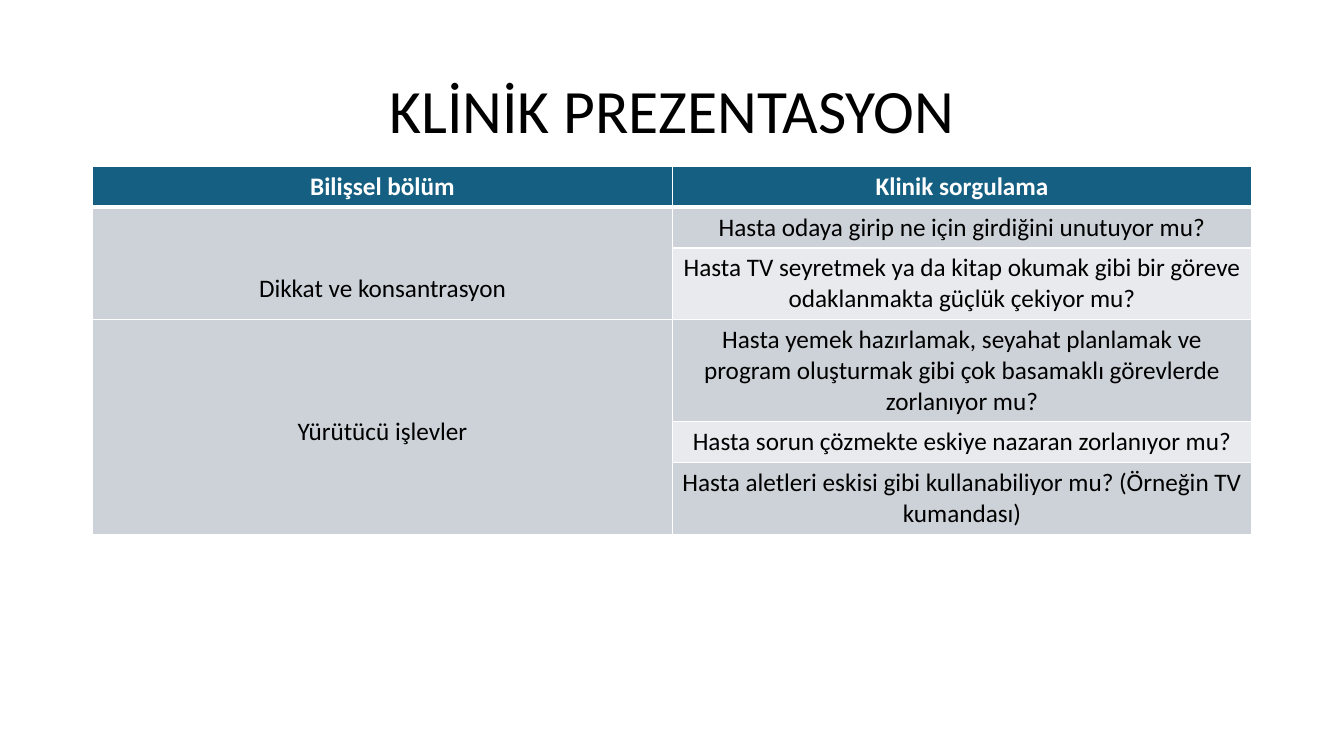
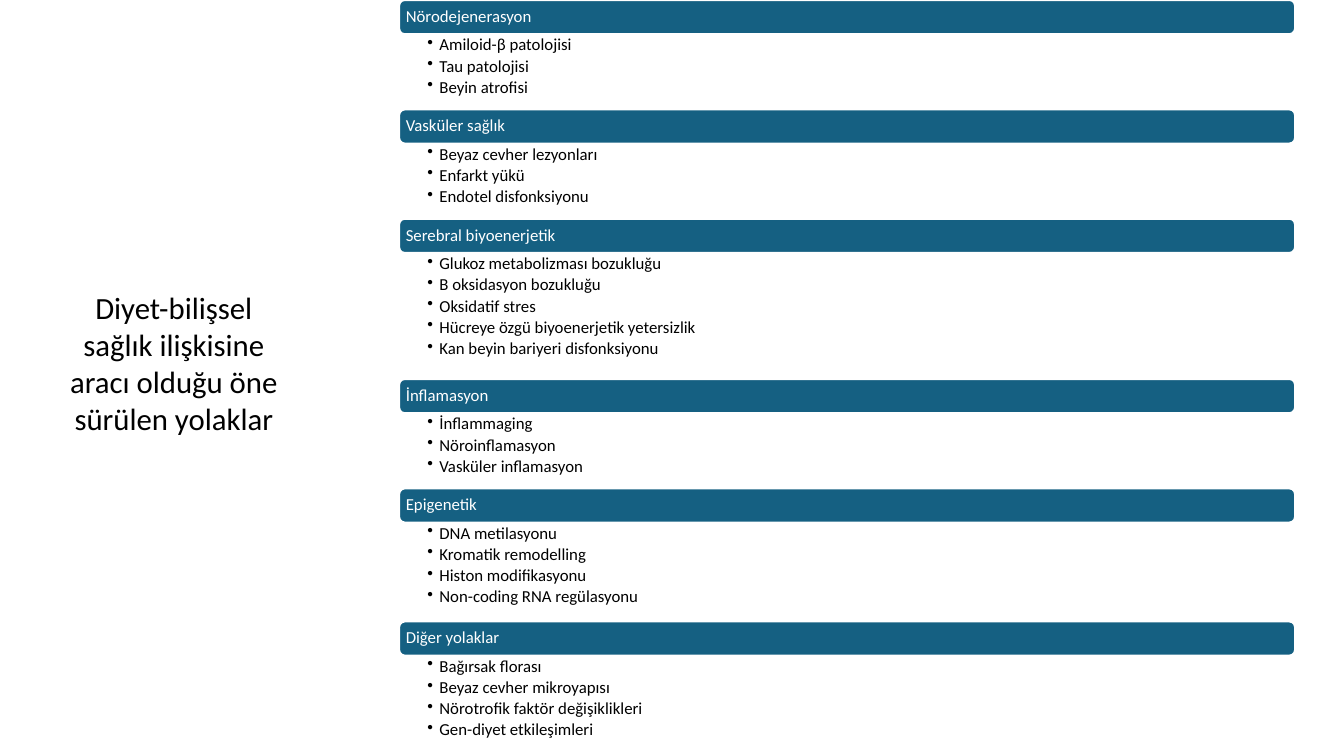
from lxml.etree import SubElement
from pptx import Presentation
from pptx.dml.color import RGBColor
from pptx.enum.shapes import MSO_SHAPE
from pptx.enum.text import MSO_ANCHOR, PP_ALIGN
from pptx.oxml import parse_xml
from pptx.oxml.ns import nsdecls, qn
from pptx.util import Emu, Pt

PX_PER_INCH = 200
FONT = "Calibri"
BLACK, WHITE, TEAL = "000000", "FFFFFF", "156082"
BAND_DARK, BAND_LIGHT = "CCD2D8", "E8EAED"

TABLE_HEADER = ("Bilişsel bölüm", "Klinik sorgulama")
# Cognitive domain, space above its label, questions with their row heights
DOMAINS = [
    ("Dikkat ve konsantrasyon", 132, [
        ("Hasta odaya girip ne için girdiğini unutuyor mu?", 81),
        ("Hasta TV seyretmek ya da kitap okumak gibi bir göreve odaklanmakta güçlük çekiyor mu?", 142),
    ]),
    ("Yürütücü işlevler", 193, [
        ("Hasta yemek hazırlamak, seyahat planlamak ve program oluşturmak gibi çok basamaklı "
         "görevlerde zorlanıyor mu?", 203),
        ("Hasta sorun çözmekte eskiye nazaran zorlanıyor mu?", 81),
        ("Hasta aletleri eskisi gibi kullanabiliyor mu? (Örneğin TV kumandası)", 142),
    ]),
]
HEADER_HEIGHT = 81

PATHWAYS = [
    ("Nörodejenerasyon", ["Amiloid-β patolojisi", "Tau patolojisi", "Beyin atrofisi"]),
    ("Vasküler sağlık", ["Beyaz cevher lezyonları", "Enfarkt yükü", "Endotel disfonksiyonu"]),
    ("Serebral biyoenerjetik", [
        "Glukoz metabolizması bozukluğu", "Β oksidasyon bozukluğu", "Oksidatif stres",
        "Hücreye özgü biyoenerjetik yetersizlik", "Kan beyin bariyeri disfonksiyonu"]),
    ("İnflamasyon", ["İnflammaging", "Nöroinflamasyon", "Vasküler inflamasyon"]),
    ("Epigenetik", ["DNA metilasyonu", "Kromatik remodelling", "Histon modifikasyonu",
                    "Non-coding RNA regülasyonu"]),
    ("Diğer yolaklar", ["Bağırsak florası", "Beyaz cevher mikroyapısı",
                        "Nörotrofik faktör değişiklikleri", "Gen-diyet etkileşimleri"]),
]
PATHWAY_LEFT, PATHWAY_WIDTH, BAR_HEIGHT = 792, 1778, 68
LIST_HEIGHTS = {3: 149, 4: 196, 5: 250}  # by number of items


def px(length):
    return Emu(length * 914400 // PX_PER_INCH)


def color(hex_string):
    return RGBColor.from_string(hex_string)


def fill_solid(target, hex_string):
    target.fill.solid()
    target.fill.fore_color.rgb = color(hex_string)


def style_text(frame, size, hex_string, align=PP_ALIGN.LEFT, bold=False, spacing=1.0):
    for para in frame.paragraphs:
        para.alignment = align
        para.line_spacing = spacing
        for span in para.runs:
            span.font.name = FONT
            span.font.size = Pt(size)
            span.font.bold = bold
            span.font.color.rgb = color(hex_string)


def set_margins(frame, left, top, right, bottom):
    frame.margin_left, frame.margin_top = px(left), px(top)
    frame.margin_right, frame.margin_bottom = px(right), px(bottom)


def add_text(page, text, left, top, width, height):
    """Add a wrapping text box and return its text frame."""
    frame = page.shapes.add_textbox(px(left), px(top), px(width), px(height)).text_frame
    frame.word_wrap = True
    frame.text = text
    return frame


def add_title(page, text, bounds, size, spacing=1.0):
    frame = add_text(page, text, *bounds)
    frame.vertical_anchor = MSO_ANCHOR.MIDDLE
    style_text(frame, size, BLACK, PP_ALIGN.CENTER, spacing=spacing)


def set_borders(cell, top=1, bottom=1):
    """Draw white cell borders; widths are in points."""
    properties = cell._tc.get_or_add_tcPr()
    for index, (side, width) in enumerate((("L", 1), ("R", 1), ("T", top), ("B", bottom))):
        properties.insert(index, parse_xml(
            f'<a:ln{side} {nsdecls("a")} w="{Pt(width)}"><a:solidFill>'
            f'<a:srgbClr val="{WHITE}"/></a:solidFill></a:ln{side}>'))


def fill_cell(cell, text, fill, ink=BLACK, bold=False):
    cell.text = text
    fill_solid(cell, fill)
    style_text(cell.text_frame, 18, ink, PP_ALIGN.CENTER, bold)


def add_domain_table(page, left, top, width):
    questions = [question for domain in DOMAINS for question in domain[2]]
    heights = [HEADER_HEIGHT] + [height for _, height in questions]
    table = page.shapes.add_table(len(heights), 2, px(left), px(top),
                                  px(width), px(sum(heights))).table
    table.horz_banding = False
    for row, height in zip(table.rows, heights):
        row.height = px(height)
    for column, text in enumerate(TABLE_HEADER):
        fill_cell(table.cell(0, column), text, TEAL, WHITE, True)
    for row, (question, _) in enumerate(questions, 1):
        fill_cell(table.cell(row, 0), "", BAND_DARK)
        fill_cell(table.cell(row, 1), question, BAND_DARK if row % 2 else BAND_LIGHT)
    row = 1
    for name, space_above, rows in DOMAINS:
        label = table.cell(row, 0)
        label.merge(table.cell(row + len(rows) - 1, 0))
        fill_cell(label, name, BAND_DARK)
        label.margin_top = px(space_above)
        row += len(rows)
    for row in range(len(heights)):
        for column in range(2):
            set_borders(table.cell(row, column), top=3 if row == 1 else 1,
                        bottom=3 if row == 0 else 1)


def add_bar(page, text, top):
    bar = page.shapes.add_shape(MSO_SHAPE.ROUNDED_RECTANGLE, px(PATHWAY_LEFT), px(top),
                                px(PATHWAY_WIDTH), px(BAR_HEIGHT))
    bar.shadow.inherit = False
    fill_solid(bar, TEAL)
    bar.line.color.rgb = color(WHITE)
    bar.line.width = Pt(1.5)
    frame = bar.text_frame
    frame.text = text
    frame.vertical_anchor = MSO_ANCHOR.MIDDLE
    set_margins(frame, 10, 10, 10, 10)
    style_text(frame, 12, WHITE, spacing=0.9)


def add_bullets(page, items, top, height):
    frame = add_text(page, "\n".join(items), PATHWAY_LEFT, top, PATHWAY_WIDTH, height)
    set_margins(frame, 56, 4, 18, 4)
    style_text(frame, 12, BLACK, spacing=0.9)
    for para in frame.paragraphs:
        para.space_after = Pt(2.2)
        properties = para._p.get_or_add_pPr()
        properties.set("marL", str(px(24)))
        properties.set("indent", str(-px(24)))
        SubElement(properties, qn("a:buChar"), char="•")


def add_pathways(page):
    top = 0
    for name, items in PATHWAYS:
        height = LIST_HEIGHTS[len(items)]
        add_bar(page, name, top)
        add_bullets(page, items, top + BAR_HEIGHT, height)
        top += BAR_HEIGHT + height


def main():
    deck = Presentation()
    deck.slide_width, deck.slide_height = px(2667), px(1500)
    blank = deck.slide_layouts[6]

    page = deck.slides.add_slide(blank)
    add_title(page, "KLİNİK PREZENTASYON", (184, 80, 2300, 290), 44, 0.9)
    add_domain_table(page, 184, 330, 2300)

    page = deck.slides.add_slide(blank)
    add_pathways(page)
    add_title(page, "Diyet-bilişsel sağlık ilişkisine aracı olduğu öne sürülen yolaklar",
              (96, 524, 498, 390), 22)

    deck.save("out.pptx")


if __name__ == "__main__":
    main()
